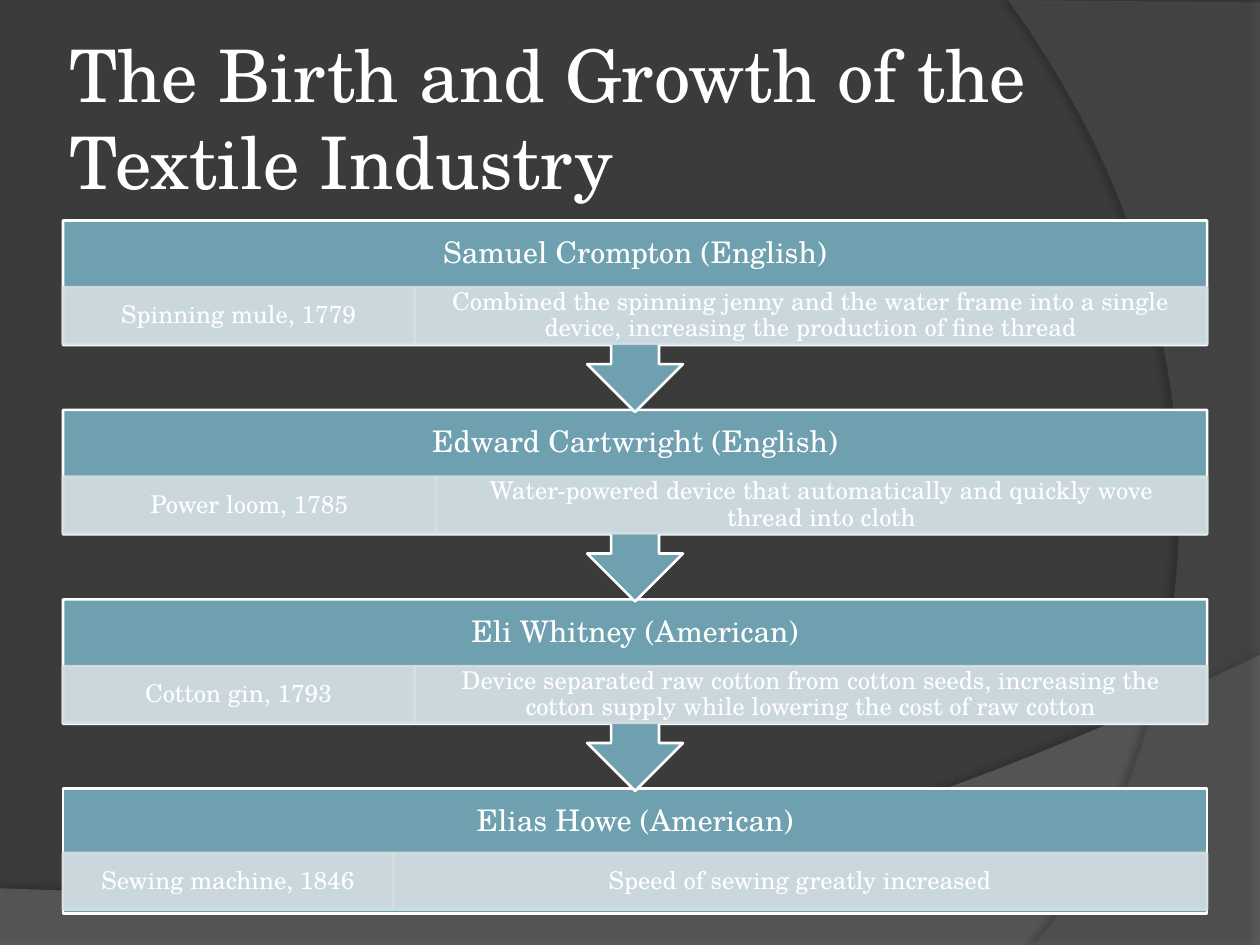
from dataclasses import dataclass

from lxml import etree
from pptx import Presentation
from pptx.dml.color import RGBColor
from pptx.enum.shapes import MSO_SHAPE
from pptx.enum.text import MSO_ANCHOR, MSO_AUTO_SIZE, PP_ALIGN
from pptx.oxml.ns import qn
from pptx.util import Inches, Pt

RECTANGLE = MSO_SHAPE.RECTANGLE
CALLOUT = MSO_SHAPE.UP_ARROW_CALLOUT
MIDDLE = MSO_ANCHOR.MIDDLE
NO_AUTOFIT = MSO_AUTO_SIZE.NONE
LEFT, CENTER = PP_ALIGN.LEFT, PP_ALIGN.CENTER

TITLE = "The Birth and Growth of the Textile Industry"
INVENTORS = [
    ("Samuel Crompton (English)", "Spinning mule, 1779", 2.79,
     "Combined the spinning jenny and the water frame into a single device, "
     "increasing the production of fine thread"),
    ("Edward Cartwright (English)", "Power loom, 1785", 2.96,
     "Water-powered device that automatically and quickly wove thread into cloth"),
    ("Eli Whitney (American)", "Cotton gin, 1793", 2.79,
     "Device separated raw cotton from cotton seeds, increasing the cotton supply "
     "while lowering the cost of raw cotton"),
    ("Elias Howe (American)", "Sewing machine, 1846", 2.62,
     "Speed of sewing greatly increased"),
]
FLOW_LEFT, FLOW_TOP, FLOW_WIDTH = 0.5, 1.75, 9.08
FLOW_LAST_TOP = 6.26
STEP_PITCH = (FLOW_LAST_TOP - FLOW_TOP) / (len(INVENTORS) - 1)
CALLOUT_HEIGHT, LAST_HEIGHT = 1.52, 0.99
HEADING_HEIGHT, DETAIL_HEIGHT = 0.53, 0.45


@dataclass(frozen=True)
class Theme:
    """Colours, font and type sizes of the slide."""
    background: str = "3B3B3B"
    wave: str = "7F7F7F"
    arc: str = "5E5E5E"
    step: str = "6EA0B0"
    detail: str = "D5DFE4"
    text: str = "FFFFFF"
    shadow: str = "000000"
    font: str = "TeX Gyre Schola"
    title_size: float = 41.4
    heading_size: float = 17
    detail_size: float = 14
    line_width: float = 1.5


def apply_format(target, values):
    """Set every attribute named in values on target."""
    for name, value in values.items():
        setattr(target, name, value)


def bezier(start, first, second, end, steps=40):
    """Return points along a cubic curve, without its start."""
    points = []
    for step in range(1, steps + 1):
        t = step / steps
        weights = ((1 - t) ** 3, 3 * t * (1 - t) ** 2, 3 * t * t * (1 - t), t ** 3)
        points.append(tuple(
            sum(weight * point[axis] for weight, point in zip(weights, (start, first, second, end)))
            for axis in (0, 1)))
    return points


class SlideBuilder:
    """Draws styled elements on the current slide."""

    def __init__(self, slide, theme):
        """Keep the slide and theme and paint the background."""
        self.slide = slide
        self.theme = theme
        fill = slide.background.fill
        fill.solid()
        fill.fore_color.rgb = RGBColor.from_string(theme.background)

    def paint(self, shape, fill, line=None, opacity=100):
        """Give a shape its fill, outline and opacity."""
        shape.shadow.inherit = False
        shape.fill.solid()
        shape.fill.fore_color.rgb = RGBColor.from_string(fill)
        if line:
            shape.line.color.rgb = RGBColor.from_string(line)
            shape.line.width = Pt(self.theme.line_width)
        else:
            shape.line.fill.background()
        if opacity < 100:
            for color in shape.element.spPr.iter(qn("a:srgbClr")):
                etree.SubElement(color, qn("a:alpha"), val=str(opacity * 1000))

    def set_text(self, shape, text, size, alignment=CENTER, spacing=0.9, margins=(0.11, 0.02)):
        """Put one formatted paragraph into a shape."""
        horizontal, vertical = (Inches(margin) for margin in margins)
        frame = shape.text_frame
        apply_format(frame, {
            "text": text, "word_wrap": True, "auto_size": NO_AUTOFIT,
            "vertical_anchor": MIDDLE,
            "margin_left": horizontal, "margin_right": horizontal,
            "margin_top": vertical, "margin_bottom": vertical})
        paragraph = frame.paragraphs[0]
        apply_format(paragraph, {"alignment": alignment, "line_spacing": spacing})
        font = paragraph.runs[0].font
        apply_format(font, {"name": self.theme.font, "size": Pt(size)})
        font.color.rgb = RGBColor.from_string(self.theme.text)

    def title(self, text, left, top, width, height):
        """Place the title placeholder in front of the backdrop."""
        title = self.slide.shapes.title
        apply_format(title, {"left": Inches(left), "top": Inches(top),
                             "width": Inches(width), "height": Inches(height)})
        self.set_text(title, text, self.theme.title_size, LEFT, 1.0, (0.05, 0.05))
        title.element.getparent().append(title.element)

    def backdrop(self, points, fill, opacity, shadow_opacity, distance, direction):
        """Draw a translucent outline with a soft shadow."""
        start, *others = [(Inches(x), Inches(y)) for x, y in points]
        builder = self.slide.shapes.build_freeform(*start)
        builder.add_line_segments(others, close=True)
        shape = builder.convert_to_shape()
        self.paint(shape, fill, opacity=opacity)
        effects = shape.element.spPr.find(qn("a:effectLst"))
        shadow = etree.SubElement(
            effects, qn("a:outerShdw"), blurRad=str(Pt(4)), dist=str(Pt(distance)),
            dir=str(direction * 60000), algn="ctr", rotWithShape="0")
        color = etree.SubElement(shadow, qn("a:srgbClr"), val=self.theme.shadow)
        etree.SubElement(color, qn("a:alpha"), val=str(shadow_opacity * 1000))

    def detail(self, text, left, top, width):
        """Draw one pale cell under a heading."""
        shape = self.slide.shapes.add_shape(
            RECTANGLE, Inches(left), Inches(top), Inches(width), Inches(DETAIL_HEIGHT))
        self.paint(shape, self.theme.detail, self.theme.detail, 90)
        self.set_text(shape, text, self.theme.detail_size)

    def step(self, top, inventor, is_last):
        """Draw an inventor's block, with an arrow unless it is the last."""
        name, invention, split, effect = inventor
        kind, height, detail_offset = (
            (RECTANGLE, LAST_HEIGHT, 0.51) if is_last
            else (CALLOUT, CALLOUT_HEIGHT, HEADING_HEIGHT))
        left, width = Inches(FLOW_LEFT), Inches(FLOW_WIDTH)
        block = self.slide.shapes.add_shape(kind, left, Inches(top), width, Inches(height))
        block.rotation = 0 if is_last else 180
        self.paint(block, self.theme.step, self.theme.text)
        heading = self.slide.shapes.add_textbox(left, Inches(top), width, Inches(HEADING_HEIGHT))
        self.set_text(heading, name, self.theme.heading_size, margins=(0.13, 0.13))
        detail_top = top + detail_offset
        self.detail(invention, FLOW_LEFT, detail_top, split)
        self.detail(effect, FLOW_LEFT + split, detail_top, FLOW_WIDTH - split)


def main():
    """Build and save the slide."""
    presentation = Presentation()
    apply_format(presentation, {"slide_width": Inches(10), "slide_height": Inches(7.5)})
    theme = Theme()
    slide = presentation.slides.add_slide(presentation.slide_layouts[5])
    builder = SlideBuilder(slide, theme)

    wave = [(0, 7.05), (0, 7.5), (10, 7.5), (10, 5.2)]
    wave += bezier((10, 5.2), (5.59, 7.29), (3.91, 7.19), (0, 7.05))
    builder.backdrop(wave, theme.wave, 45, 35, 3.5, 270)
    arc = [(10, 0.02), (10, 7.5), (8.21, 7.5)]
    arc += bezier((8.21, 7.5), (9.35, 6.19), (10.18, 3), (8, 0))
    builder.backdrop(arc, theme.arc, 40, 45, 4, 180)

    builder.title(TITLE, 0.5, 0.3, 8.17, 1.25)
    last = len(INVENTORS) - 1
    for index, inventor in reversed(list(enumerate(INVENTORS))):
        builder.step(FLOW_TOP + index * STEP_PITCH, inventor, index == last)
    presentation.save("out.pptx")


if __name__ == "__main__":
    main()
